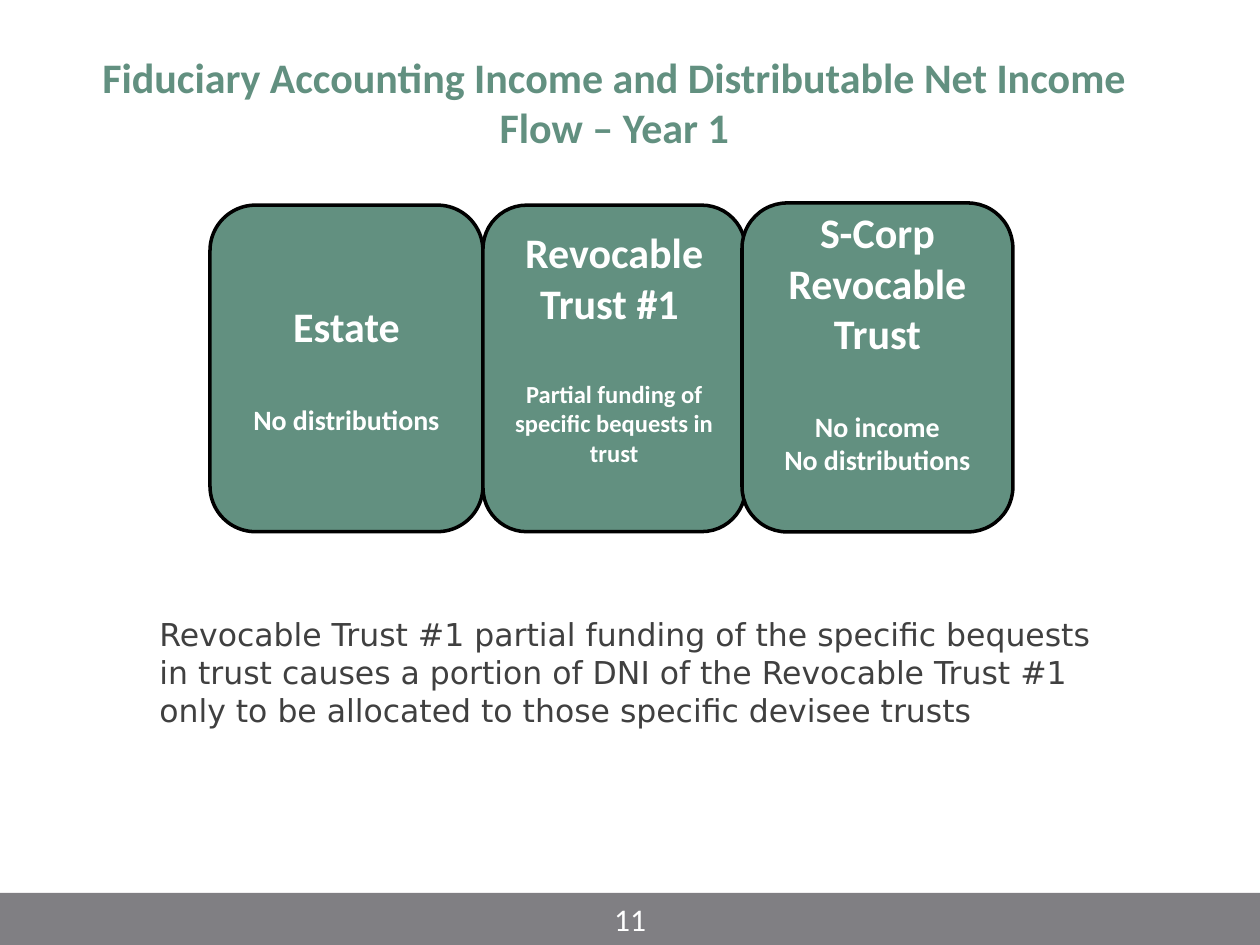
from dataclasses import dataclass

from pptx import Presentation
from pptx.dml.color import RGBColor
from pptx.enum import shapes, text
from pptx.util import Pt

MID = text.MSO_ANCHOR.MIDDLE
TOP = text.MSO_ANCHOR.TOP
LEFT = text.PP_ALIGN.LEFT
CENTER = text.PP_ALIGN.CENTER


@dataclass(frozen=True)
class Theme:
    green: str = "629080"
    gray: str = "807F83"
    dark: str = "404040"
    black: str = "000000"
    white: str = "FFFFFF"
    head: str = "Calibri"
    body: str = "DejaVu Sans"
    big: int = 24
    mid: int = 18
    note: int = 16
    small: int = 14
    gap: float = 29.3


def apply(item, form):
    for key, val in form.items():
        setattr(item, key, val)


class Page:
    def __init__(self, slide, theme):
        self.slide, self.theme = slide, theme

    def fill_text(self, frame, lines, color, font, align=CENTER, anchor=MID, low=3.6):
        """Fill a frame with (text, size, bold, space before); low is the bottom inset."""
        apply(frame, dict(word_wrap=True, auto_size=text.MSO_AUTO_SIZE.NONE,
                          vertical_anchor=anchor, margin_left=Pt(7.2),
                          margin_right=Pt(7.2), margin_top=Pt(3.6),
                          margin_bottom=Pt(low)))
        for i, (words, size, bold, space) in enumerate(lines):
            par = frame.add_paragraph() if i else frame.paragraphs[0]
            par.alignment = align
            if space:
                par.space_before = Pt(space)
            run = par.add_run()
            run.text = words
            apply(run.font, dict(name=font, size=Pt(size), bold=bold))
            run.font.color.rgb = RGBColor.from_string(color)

    def title(self, words, place):
        t, box = self.theme, self.slide.shapes.title
        apply(box, dict(zip(("left", "top", "width", "height"), map(Pt, place))))
        self.fill_text(box.text_frame, [(words, t.big, True, 0)], t.green, t.head)

    def label(self, words, place, color, font, align):
        box = self.slide.shapes.add_textbox(*map(Pt, place))
        self.fill_text(box.text_frame, [(words, self.theme.mid, False, 0)],
                       color, font, align, TOP)

    def block(self, kind, place, fill, line=None):
        box = self.slide.shapes.add_shape(kind, *map(Pt, place))
        box.shadow.inherit = False
        box.fill.solid()
        box.fill.fore_color.rgb = RGBColor.from_string(fill)
        if line:
            box.line.color.rgb = RGBColor.from_string(line)
            box.line.width = Pt(2)
        else:
            box.line.fill.background()
        return box

    def card(self, place, heads, notes, size, rise=0):
        """Draw a rounded card; rise is extra room kept below its text."""
        t = self.theme
        box = self.block(shapes.MSO_SHAPE.ROUNDED_RECTANGLE, place, t.green, t.black)
        lines = [(h, t.big, True, 0) for h in heads]
        lines += [(n, size, True, 0 if i else t.gap) for i, n in enumerate(notes)]
        self.fill_text(box.text_frame, lines, t.white, t.head, low=3.6 + rise)


def main():
    deck = Presentation()
    apply(deck, dict(slide_width=Pt(720), slide_height=Pt(540)))
    t = Theme()
    page = Page(deck.slides.add_slide(deck.slide_layouts[5]), t)

    page.block(shapes.MSO_SHAPE.RECTANGLE, (0, 510.3, 720, 30), t.gray)
    page.title("Fiduciary Accounting Income and Distributable Net Income Flow – Year 1",
               (39, 24, 624, 68))
    page.card((120, 117.2, 156, 186.6), ["Estate"], ["No distributions"], t.note)
    page.card((276, 117.2, 150, 186.6), ["Revocable", "Trust #1 "],
              ["Partial funding of specific bequests in trust"], t.small, 24.4)
    page.card((424, 116, 154.8, 188), ["S-Corp Revocable Trust"],
              ["No income", "No distributions"], t.note, t.gap)
    page.label("Revocable Trust #1 partial funding of the specific bequests in trust "
               "causes a portion of DNI of the Revocable Trust #1 only to be allocated "
               "to those specific devisee trusts",
               (84, 348, 564, 94), t.dark, t.body, LEFT)
    page.label("11", (276, 511, 168, 29), t.white, t.head, CENTER)
    deck.save("out.pptx")


if __name__ == "__main__":
    main()
